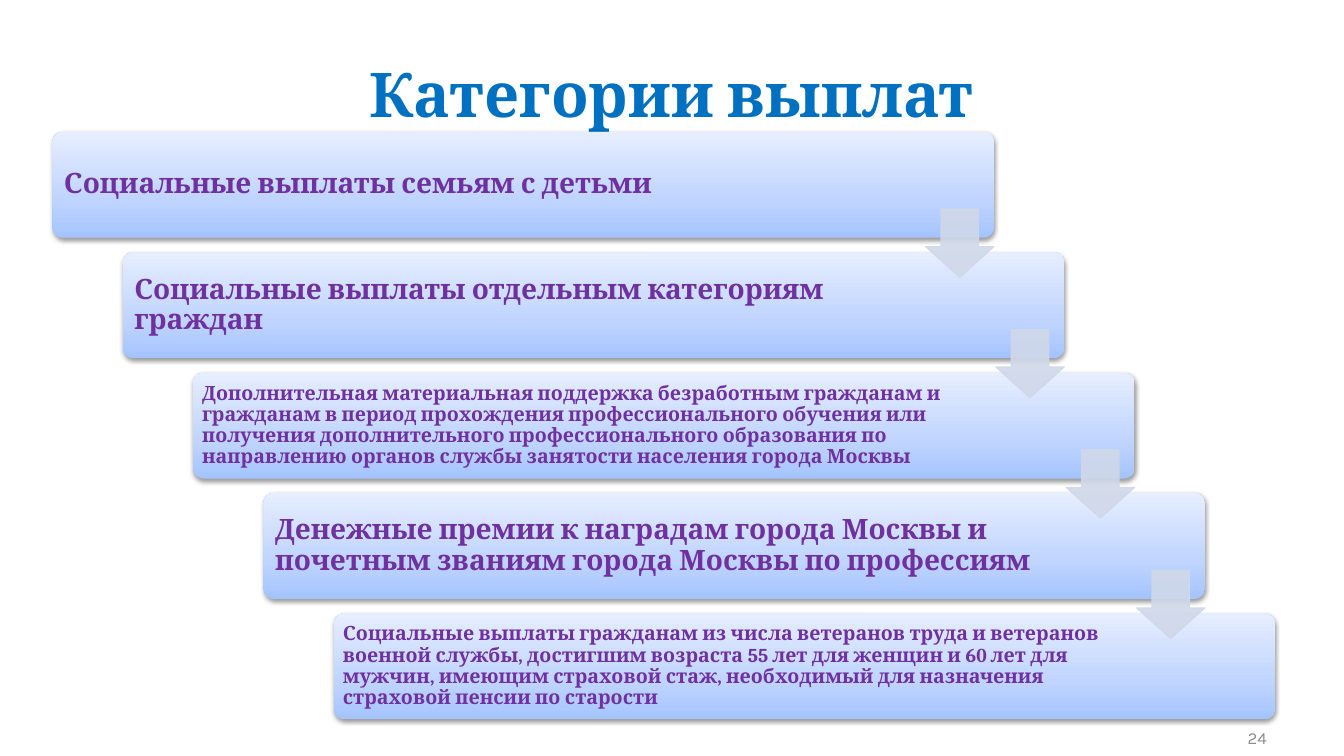
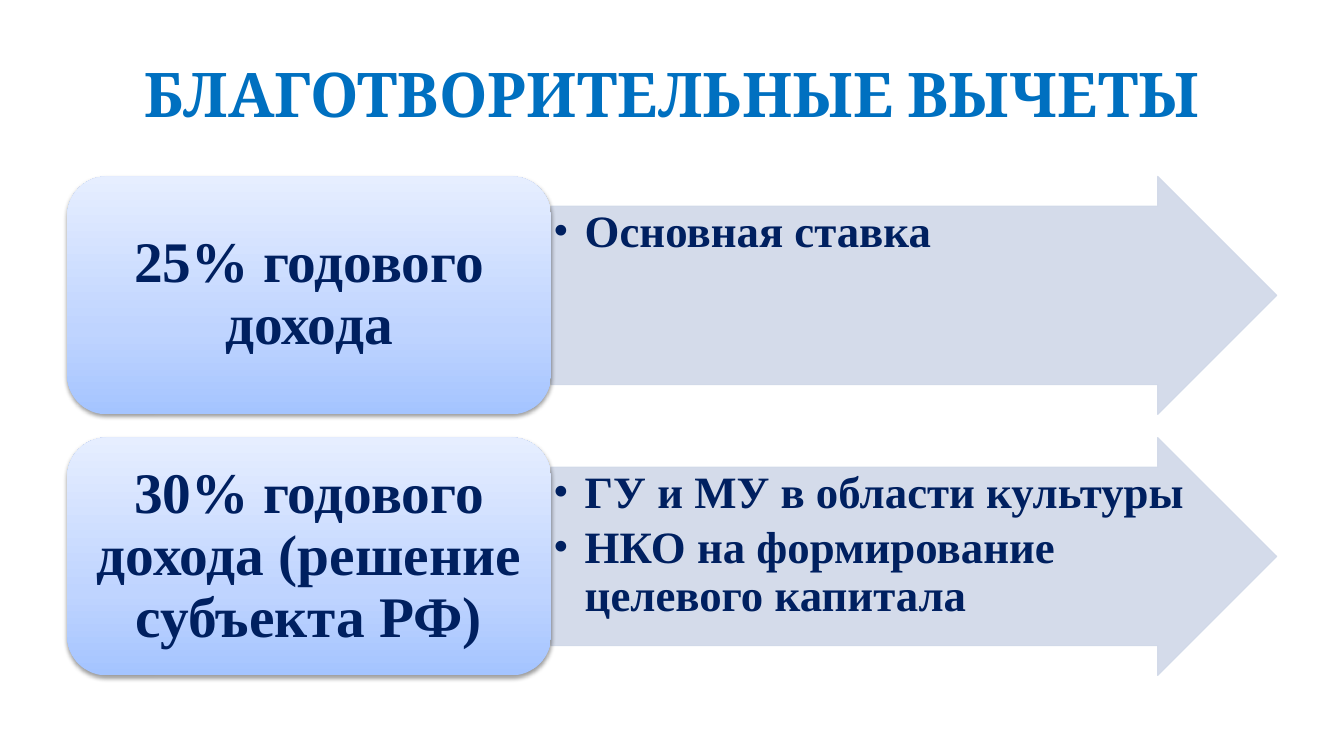
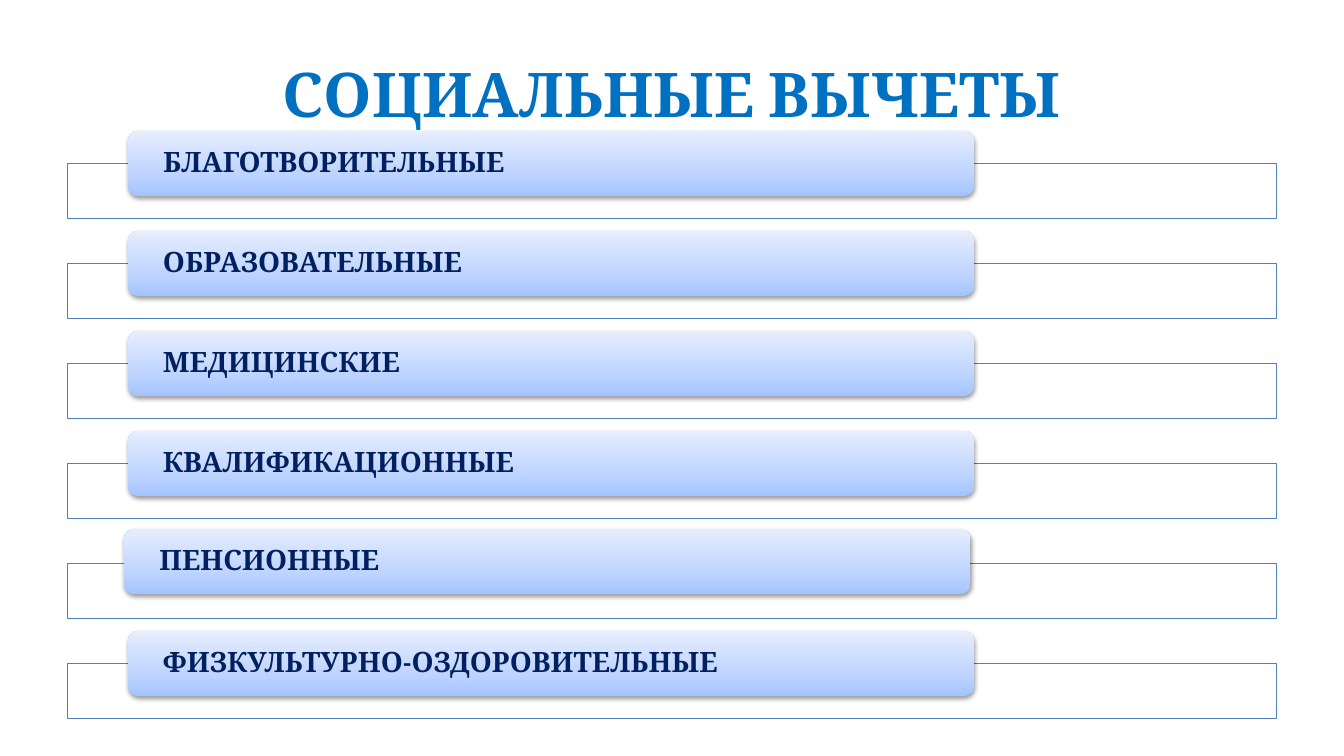
from copy import deepcopy
from lxml import etree
from pptx import Presentation
from pptx.dml.color import RGBColor
from pptx.enum import shapes, text
from pptx.oxml.ns import qn
from pptx.util import Pt

colour = RGBColor.from_string
KIND = shapes.MSO_SHAPE
ANCHOR = text.MSO_ANCHOR
ALIGN = text.PP_ALIGN

TITLE_BLUE, NAVY, PURPLE = "0070C0", "002060", "7030A0"
ARROW_GREY, FRAME_BLUE, NUMBER_GREY = "D0D8E8", "4F81BD", "8C8C8C"
PANEL_STOPS = [(0, "A4C4FF"), (0.35, "BFD4FF"), (1, "E6EEFF")]


def draw(page, kind, left, top, width, height, adjust=(), fill=None, line=None, alpha=None):
    """Add a shape; without a fill it becomes a gradient panel with a shadow."""
    shape = page.shapes.add_shape(kind, Pt(left), Pt(top), Pt(width), Pt(height))
    for index, value in enumerate(adjust):
        shape.adjustments[index] = value
    shape.shadow.inherit = False
    properties = shape._element.spPr
    if fill:
        shape.fill.solid()
        shape.fill.fore_color.rgb = colour(fill)
    else:
        shape.fill.gradient()
        shape.fill.gradient_angle = 90
        stop_list = properties.find(".//" + qn("a:gsLst"))
        stop_list.insert(1, deepcopy(stop_list[0]))
        for stop, (position, shade) in zip(shape.fill.gradient_stops, PANEL_STOPS):
            stop.position = position
            stop.color.rgb = colour(shade)
        shadow = etree.SubElement(
            properties.find(qn("a:effectLst")), qn("a:outerShdw"),
            blurRad="40000", dist="20000", dir="5400000", rotWithShape="0")
        black = etree.SubElement(shadow, qn("a:srgbClr"), val="000000")
        etree.SubElement(black, qn("a:alpha"), val="38000")
    if line:
        shape.line.color.rgb = colour(line)
        shape.line.width = Pt(0.75)
    else:
        shape.line.fill.background()
    if alpha:
        for node in properties.iter(qn("a:srgbClr")):
            etree.SubElement(node, qn("a:alpha"), val=str(alpha * 1000))
    return shape


def write(shape, lines, font, size, shade, margins=(7.2, 3.6, 7.2, 3.6), align=ALIGN.LEFT,
          anchor=ANCHOR.MIDDLE, spacing=0.9, bold=True, bullets=False):
    """Fill a shape with one paragraph a line; margins are left, top, right, bottom."""
    frame = shape.text_frame
    frame.word_wrap = True
    frame.vertical_anchor = anchor
    (frame.margin_left, frame.margin_top,
     frame.margin_right, frame.margin_bottom) = map(Pt, margins)
    for index, line in enumerate(lines):
        para = frame.add_paragraph() if index else frame.paragraphs[0]
        para.alignment = align
        para.line_spacing = spacing
        if bullets:
            para.space_after = Pt(5)
            properties = para._p.get_or_add_pPr()
            properties.set("marL", str(Pt(22.5)))
            properties.set("indent", str(-Pt(22.5)))
            etree.SubElement(properties, qn("a:buFont"), typeface=font)
            etree.SubElement(properties, qn("a:buChar"), char="•")
        span = para.add_run()
        span.text = line
        span.font.name = font
        span.font.size = Pt(size)
        span.font.bold = bold
        span.font.color.rgb = colour(shade)


deck = Presentation()
deck.slide_width, deck.slide_height = Pt(960), Pt(540)

pages = []
for title in ["Категории выплат", "БЛАГОТВОРИТЕЛЬНЫЕ ВЫЧЕТЫ", "СОЦИАЛЬНЫЕ ВЫЧЕТЫ"]:
    page = deck.slides.add_slide(deck.slide_layouts[6])
    box = page.shapes.add_textbox(Pt(48), Pt(21.6), Pt(864), Pt(90))
    write(box, [title], "Cambria", 44, TITLE_BLUE, align=ALIGN.CENTER, spacing=1.0)
    pages.append(page)
payments_page, charity_page, social_page = pages

# Payment categories: a staircase of panels, with the slide number below the last step
number = payments_page.shapes.add_textbox(Pt(688), Pt(516), Pt(224), Pt(22))
write(number, ["24"], "Karla", 12, NUMBER_GREY, align=ALIGN.RIGHT, spacing=1.0, bold=False)

payments = [
    (20, "Социальные выплаты семьям с детьми"),
    (20, "Социальные выплаты отдельным категориям граждан"),
    (14, "Дополнительная материальная поддержка безработным гражданам и гражданам в период "
         "прохождения профессионального обучения или получения дополнительного "
         "профессионального образования по направлению органов службы занятости населения "
         "города Москвы"),
    (20, "Денежные премии к наградам города Москвы и почетным званиям города Москвы "
         "по профессиям"),
    (14, "Социальные выплаты гражданам из числа ветеранов труда и ветеранов военной службы, "
         "достигшим возраста 55 лет для женщин и 60 лет для мужчин, имеющим страховой стаж, "
         "необходимый для назначения страховой пенсии по старости"),
]
STEP_WIDTH, ARROW_SIZE = 672.5, 49
steps = [(37.5 + 50.25 * index, 94.2 + 86 * index) for index in range(len(payments))]
for (left, top), (size, label) in zip(steps, payments):
    panel = draw(payments_page, KIND.ROUNDED_RECTANGLE, left, top, STEP_WIDTH, 75.6, [0.1])
    inset = 6 if size == 20 else 4.2
    write(panel, [label], "Cambria", size, PURPLE, (inset, inset, 99 + inset, inset))
for left, top in steps[:-1]:
    draw(payments_page, KIND.DOWN_ARROW, left + STEP_WIDTH - ARROW_SIZE, top + 55,
         ARROW_SIZE, ARROW_SIZE, [0.55, 0.45], ARROW_GREY, ARROW_GREY, 90)

# Charity deductions: a rate panel and an arrow in each row
rates = [
    ("25% годового дохода", ["Основная ставка"]),
    ("30% годового дохода (решение субъекта РФ)",
     ["ГУ и МУ в области культуры", "НКО на формирование целевого капитала"]),
]
for index, (rate, uses) in enumerate(rates):
    top = 126 + 186.5 * index
    arrow = draw(charity_page, KIND.RIGHT_ARROW, 393.6, top, 518.4, 170,
                 [0.75, 0.5], ARROW_GREY, ARROW_GREY, 90)
    write(arrow, uses, "Times New Roman", 32, NAVY, (1.6,) * 4,
          anchor=ANCHOR.TOP, bullets=True)
    panel = draw(charity_page, KIND.ROUNDED_RECTANGLE, 48, top, 345.6, 170)
    write(panel, [rate], "Times New Roman", 41, NAVY, (12.3, 6.2, 12.3, 6.2), ALIGN.CENTER)

# Social deductions: a label panel over the top edge of each frame
deductions = ["БЛАГОТВОРИТЕЛЬНЫЕ", "ОБРАЗОВАТЕЛЬНЫЕ", "МЕДИЦИНСКИЕ",
              "КВАЛИФИКАЦИОННЫЕ", "ПЕНСИОННЫЕ", "ФИЗКУЛЬТУРНО-ОЗДОРОВИТЕЛЬНЫЕ"]
nudges = {"ПЕНСИОННЫЕ": (-2.6, -1.3)}
for index, label in enumerate(deductions):
    top = 93.5 + 71.44 * index
    shift_x, shift_y = nudges.get(label, (0, 0))
    draw(social_page, KIND.RECTANGLE, 48, top + 23.2, 864, 39.4, fill="FFFFFF", line=FRAME_BLUE)
    panel = draw(social_page, KIND.ROUNDED_RECTANGLE, 91.2 + shift_x, top + shift_y, 604.8, 46.5)
    write(panel, [label], "Cambria", 20, NAVY, (23, 0, 23, 0))

deck.save("out.pptx")
